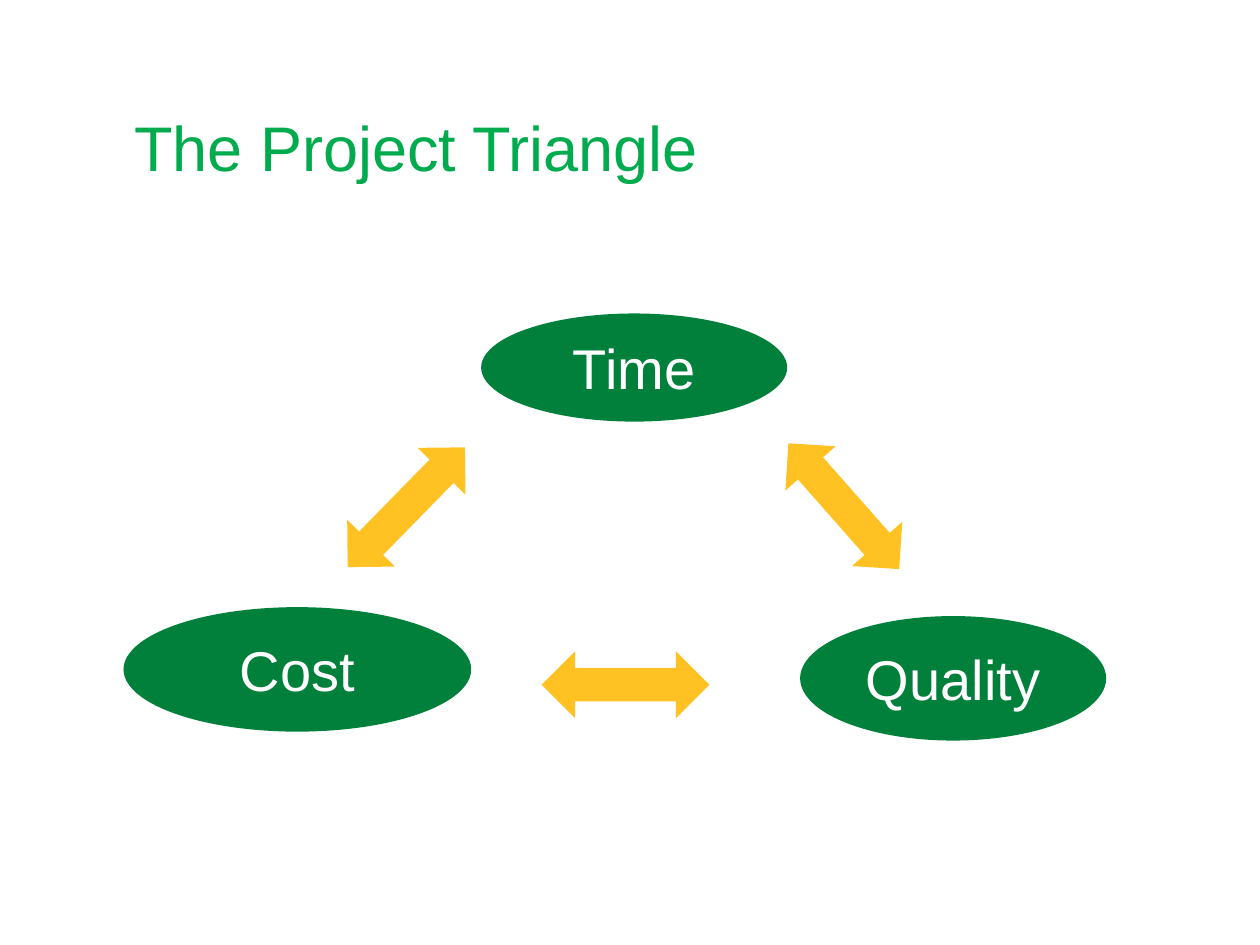
from pptx import Presentation
from pptx.dml.color import RGBColor
from pptx.enum.shapes import MSO_SHAPE
from pptx.enum.text import MSO_ANCHOR, MSO_AUTO_SIZE, PP_ALIGN
from pptx.util import Cm, Pt

ELLIPSE = MSO_SHAPE.OVAL
DOUBLE_ARROW = MSO_SHAPE.LEFT_RIGHT_ARROW
MIDDLE = MSO_ANCHOR.MIDDLE
NO_AUTOFIT = MSO_AUTO_SIZE.NONE
LEFT, CENTER = PP_ALIGN.LEFT, PP_ALIGN.CENTER

THEME = {
    "font": "Arial",
    "title": {"size": Pt(36), "color": RGBColor(0x00, 0xAB, 0x4E)},
    "label": {"size": Pt(32), "color": RGBColor(0xFF, 0xFF, 0xFF)},
    "corner": RGBColor(0x00, 0x80, 0x3B),
    "link": RGBColor(0xFF, 0xC2, 0x22),
}


def write(frame, text, style, align, frame_format):
    for attribute, value in frame_format.items():
        setattr(frame, attribute, value)
    paragraph = frame.paragraphs[0]
    paragraph.alignment = align
    run = paragraph.add_run()
    run.text = text
    run.font.name = THEME["font"]
    run.font.size = style["size"]
    run.font.color.rgb = style["color"]


def add_solid(kind, left, top, width, height, color):
    solid = slide.shapes.add_shape(kind, Cm(left), Cm(top), Cm(width), Cm(height))
    solid.shadow.inherit = False
    solid.fill.solid()
    solid.fill.fore_color.rgb = color
    solid.line.fill.background()
    return solid


deck = Presentation()
deck.slide_width, deck.slide_height = Cm(25.4), Cm(19.05)
slide = deck.slides.add_slide(deck.slide_layouts[5])

# Title
heading = slide.shapes.title
heading_place = {"left": Cm(2.46), "top": Cm(1.35), "width": Cm(17.22), "height": Cm(3.18)}
for attribute, value in heading_place.items():
    setattr(heading, attribute, value)
inset = Cm(0.25)
write(heading.text_frame, "The Project Triangle", THEME["title"], LEFT, {
    "auto_size": NO_AUTOFIT, "word_wrap": True, "vertical_anchor": MIDDLE,
    "margin_left": inset, "margin_right": inset,
    "margin_top": inset, "margin_bottom": inset,
})

# Corners of the triangle: left, top, width, height in cm
corners = {
    "Cost": (2.49, 12.24, 7.01, 2.51),
    "Quality": (16.13, 12.42, 6.17, 2.51),
    "Time": (9.7, 6.32, 6.17, 2.18),
}
for constraint, place in corners.items():
    corner = add_solid(ELLIPSE, *place, THEME["corner"])
    write(corner.text_frame, constraint, THEME["label"], CENTER,
          {"word_wrap": False, "vertical_anchor": MIDDLE})

# Trade-off arrows along the sides: left, top in cm, rotation in degrees
sides = [(15.32, 9.53, 48.6), (10.92, 13.13, 0), (6.5, 9.55, 134.4)]
for left, top, angle in sides:
    tradeoff = add_solid(DOUBLE_ARROW, left, top, 3.38, 1.35, THEME["link"])
    tradeoff.rotation = angle

deck.save("out.pptx")
